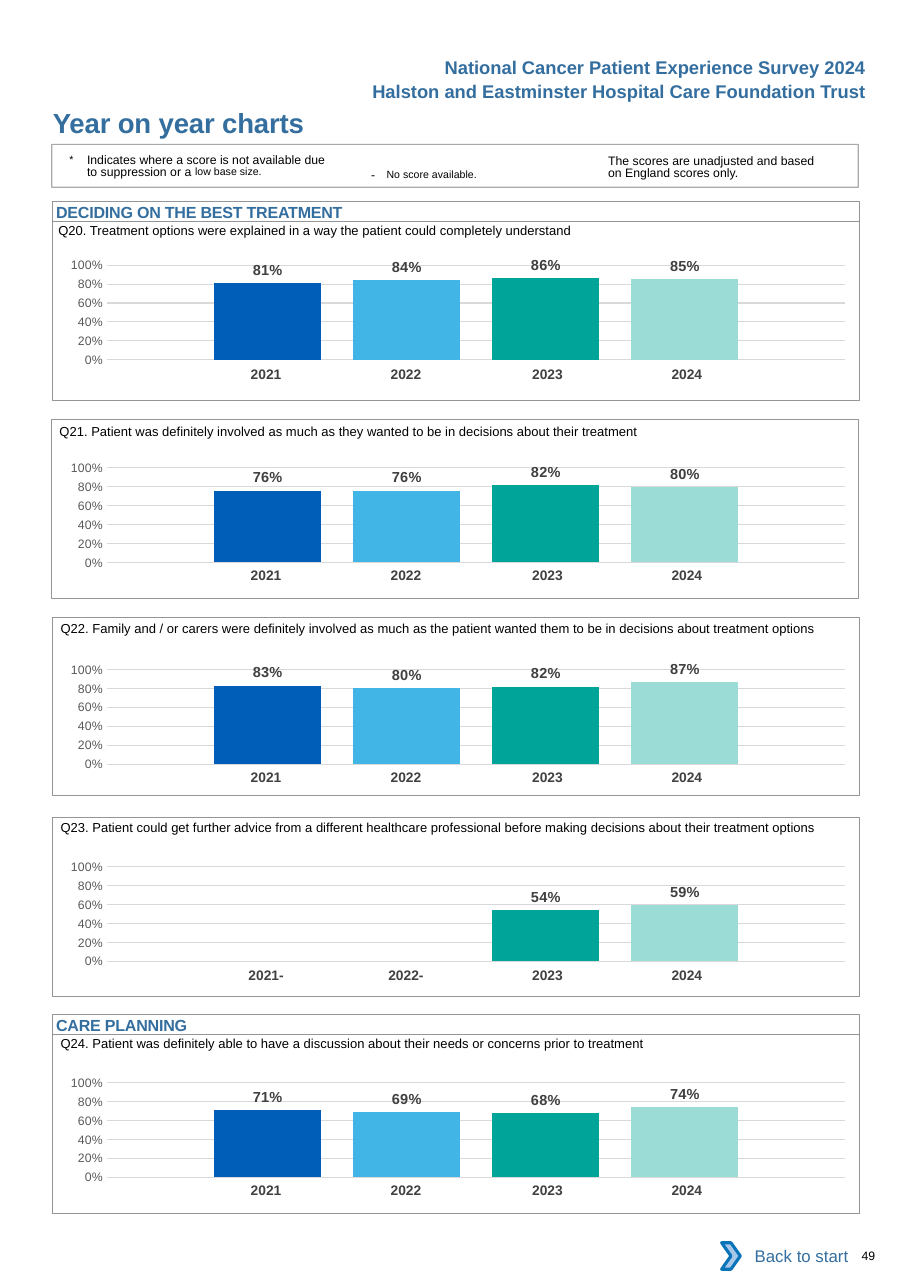
from lxml import etree
from pptx import Presentation
from pptx.chart.data import CategoryChartData
from pptx.dml.color import RGBColor
from pptx.enum.chart import XL_CHART_TYPE, XL_LABEL_POSITION, XL_TICK_MARK
from pptx.enum.shapes import MSO_SHAPE
from pptx.enum.text import MSO_ANCHOR, PP_ALIGN
from pptx.oxml import parse_xml
from pptx.oxml.ns import nsdecls, qn
from pptx.util import Pt

PX = 9144  # one hundredth of an inch
COLUMNS = XL_CHART_TYPE.COLUMN_CLUSTERED
OUTSIDE_END = XL_LABEL_POSITION.OUTSIDE_END
NO_TICK = XL_TICK_MARK.NONE
RECTANGLE, CHEVRON = MSO_SHAPE.RECTANGLE, MSO_SHAPE.CHEVRON
TOP, MIDDLE = MSO_ANCHOR.TOP, MSO_ANCHOR.MIDDLE
LEFT, CENTER, RIGHT = PP_ALIGN.LEFT, PP_ALIGN.CENTER, PP_ALIGN.RIGHT
PLAIN_TABLE = "{2D5ABB26-0587-4C30-8999-92F81FD0307C}"

COLORS = {name: RGBColor.from_string(value) for name, value in {
    "heading": "336E9F", "text": "000000", "frame": "939598", "white": "FFFFFF",
    "year": "414042", "label": "404040", "axis": "595959", "grid": "D9D9D9",
    "chevron": "A8C7E9", "chevron line": "0A74BB",
}.items()}
YEAR_COLORS = {"2021": "005EB8", "2022": "41B6E6", "2023": "00A499", "2024": "9CDCD7"}

# section title, left, frame top, question left and top, table top, chart top, question, scores
QUESTIONS = [
    ("DECIDING ON THE BEST TREATMENT", 48, 201, 53, 193, 328, 222,
     "Q20. Treatment options were explained in a way the patient could completely understand",
     (0.81, 0.84, 0.86, 0.85)),
    (None, 47, 381, 54, 375, 511, 406,
     "Q21. Patient was definitely involved as much as they wanted to be in decisions "
     "about their treatment",
     (0.76, 0.76, 0.82, 0.80)),
    (None, 48, 560, 55, 554, 694, 589,
     "Q22. Family and / or carers were definitely involved as much as the patient wanted "
     "them to be in decisions about treatment options",
     (0.83, 0.80, 0.82, 0.87)),
    (None, 48, 742, 55, 735, 874, 768,
     "Q23. Patient could get further advice from a different healthcare professional "
     "before making decisions about their treatment options",
     (None, None, 0.54, 0.59)),
    ("CARE PLANNING", 48, 939, 55, 931, 1069, 964,
     "Q24. Patient was definitely able to have a discussion about their needs or concerns "
     "prior to treatment",
     (0.71, 0.69, 0.68, 0.74)),
]

deck = Presentation()
deck.slide_width, deck.slide_height = 826 * PX, 1169 * PX
page = deck.slides.add_slide(deck.slide_layouts[6])


def add_text(area, spans, size, color="text", bold=False, align=LEFT, margins=(0, 0, 0, 0),
             before=0, line=None, shape=None):
    """Fill a new text box, or a given shape, with spans of (text, size, attributes)."""
    box = shape or page.shapes.add_textbox(*(value * PX for value in area))
    frame = box.text_frame
    frame.word_wrap = True
    frame.vertical_anchor = TOP
    frame.margin_left, frame.margin_top, frame.margin_right, frame.margin_bottom = (
        value * PX for value in margins)
    para = frame.paragraphs[0]
    para.alignment = align
    para.space_before = Pt(before)
    if line:
        para.line_spacing = Pt(line)
    para.font.name, para.font.size, para.font.bold = "Arial", Pt(size), bold
    para.font.color.rgb = COLORS[color]
    for text, span_size, attributes in spans:
        span = para.add_run()
        span.text = text
        span.font.name, span.font.size, span.font.bold = "Arial", Pt(span_size), bold
        span.font.color.rgb = COLORS[color]
        for name, value in attributes.items():
            span.font._element.set(name, value)
    return box


def add_outline(area, kind=RECTANGLE, line="frame", width=0.5, fill=None):
    shape = page.shapes.add_shape(kind, *(value * PX for value in area))
    shape.shadow.inherit = False
    shape.fill.background()
    if fill:
        shape.fill.solid()
        shape.fill.fore_color.rgb = COLORS[fill]
    shape.line.fill.background()
    if line:
        shape.line.color.rgb = COLORS[line]
        shape.line.width = Pt(width)
    return shape


# Page heading
inset = (10, 5, 10, 5)
for top, heading in ((46, "National Cancer Patient Experience Survey 2024"),
                     (68, "Halston and Eastminster Hospital Care Foundation Trust")):
    add_text((296, top, 500, 30), [(heading, 12, {})], 12, "heading", True, RIGHT, inset)
add_text((48, 96, 450, 30), [("Year on year charts", 18, {"spc": "-10"})], 18, "heading", True,
         before=4.1)

# Key to the symbols
key_frame = add_outline((47, 131, 732, 39), width=0.75)
line_color = next(key_frame.line._ln.iter(qn("a:srgbClr")))
etree.SubElement(line_color, qn("a:alpha")).set("val", "80000")
suppressed = add_text(
    (63, 138, 238, 26),
    [("*\t", 12, {"baseline": "3000"}),
     ("Indicates where a score is not available due to suppression or a ", 8, {}),
     ("low base size.", 12, {"baseline": "7000"})],
    8, margins=(0, 3, 0, 0), before=2.5, line=8.1)
hanging = suppressed.text_frame.paragraphs[0]._p.get_or_add_pPr()
hanging.set("marL", str(16 * PX))
hanging.set("indent", str(-16 * PX))
add_text((327, 141, 183, 24),
         [("- ", 8, {"spc": "260"}), ("No score available.", 12, {"baseline": "3000"})],
         8, margins=inset, before=2.1)
add_text((552, 138, 195, 27),
         [("The scores are unadjusted and based on England scores only.", 8, {})],
         8, margins=(0, 3, 0, 0), before=2.5, line=8.1)

# One framed chart for each question
for (section, left, top, question_left, question_top, table_top, chart_top,
     question, scores) in QUESTIONS:
    table_frame = page.shapes.add_table(1, 4, 173 * PX, table_top * PX, 515 * PX, 27 * PX)
    next(table_frame.element.iter(qn("a:tableStyleId"))).text = PLAIN_TABLE
    table = table_frame.table
    table.first_row = table.horz_banding = False
    for index, (year, score) in enumerate(zip(YEAR_COLORS, scores)):
        table.columns[index].width = (127, 127, 134, 127)[index] * PX
        cell = table.cell(0, index)
        cell.fill.background()
        cell.margin_left, cell.margin_right = 10 * PX, (0, 0, 4, 12)[index] * PX
        para = cell.text_frame.paragraphs[0]
        para.text = year if score is not None else year + "-"
        para.alignment = CENTER
        para.font.name, para.font.size, para.font.bold = "Arial", Pt(9), True
        para.font.color.rgb = COLORS["year"]

    data = CategoryChartData(number_format="0%")
    data.categories = ["1"]
    for number, score in enumerate(scores, 1):
        data.add_series(f"Series {number}", [score])
    chart = page.shapes.add_chart(COLUMNS, 39 * PX, chart_top * PX, 732 * PX, 129 * PX, data).chart
    chart.has_legend = chart.has_title = False
    chart.font.name, chart.font.size = "Calibri", Pt(10)
    chart.font.color.rgb = COLORS["text"]
    chart.category_axis.visible = False
    axis = chart.value_axis
    axis.minimum_scale, axis.maximum_scale, axis.major_unit = 0, 1, 0.2
    axis.major_tick_mark = axis.minor_tick_mark = NO_TICK
    axis.format.line.fill.background()
    axis.major_gridlines.format.line.color.rgb = COLORS["grid"]
    axis.major_gridlines.format.line.width = Pt(0.75)
    axis.tick_labels.number_format, axis.tick_labels.number_format_is_linked = "0%", False
    axis.tick_labels.font.name, axis.tick_labels.font.size = "Arial", Pt(8)
    axis.tick_labels.font.color.rgb = COLORS["axis"]
    plot = chart.plots[0]
    plot.vary_by_categories = False
    plot.gap_width, plot.overlap = 200, -30
    for series, color in zip(plot.series, YEAR_COLORS.values()):
        series.format.fill.solid()
        series.format.fill.fore_color.rgb = RGBColor.from_string(color)
        labels = series.data_labels
        labels.show_value, labels.position = True, OUTSIDE_END
        labels.number_format, labels.number_format_is_linked = "0%", False
        labels.font.name, labels.font.size, labels.font.bold = "Arial", Pt(9.5), True
        labels.font.color.rgb = COLORS["label"]
    plot_area = next(chart.element.iter(qn("c:plotArea")))
    for layout in plot_area.findall(qn("c:layout")):
        plot_area.remove(layout)
    plot_area.insert(0, parse_xml(
        f'<c:layout {nsdecls("c")}><c:manualLayout><c:layoutTarget val="inner"/>'
        '<c:xMode val="edge"/><c:yMode val="edge"/><c:x val="0.08"/><c:y val="0.145"/>'
        '<c:w val="0.915"/><c:h val="0.666"/></c:manualLayout></c:layout>'))

    add_outline((left, top, 732, 162))
    if section:
        add_text(None, [(section, 10.5, {"spc": "-10"})], 10.5, "heading", True,
                 margins=(3, 1, 0, 0), before=0.5, shape=add_outline((left, top - 18, 732, 18)))
    add_text((question_left, question_top, 726, 24), [(question, 8.5, {})], 8.5,
             margins=(0, 9, 0, 0), before=6.8)

# Footer
back = add_text(None, [("Back to start", 11, {})], 11, "heading", align=RIGHT, margins=inset,
                shape=add_outline((662, 1119, 118, 42), line=None, fill="white"))
back.text_frame.vertical_anchor = MIDDLE
add_outline((655, 1128, 17, 24), CHEVRON, "chevron line", 2, "chevron")
add_text((782, 1133, 41, 13), [("49", 8, {})], 8, before=0.2)

deck.save("out.pptx")
